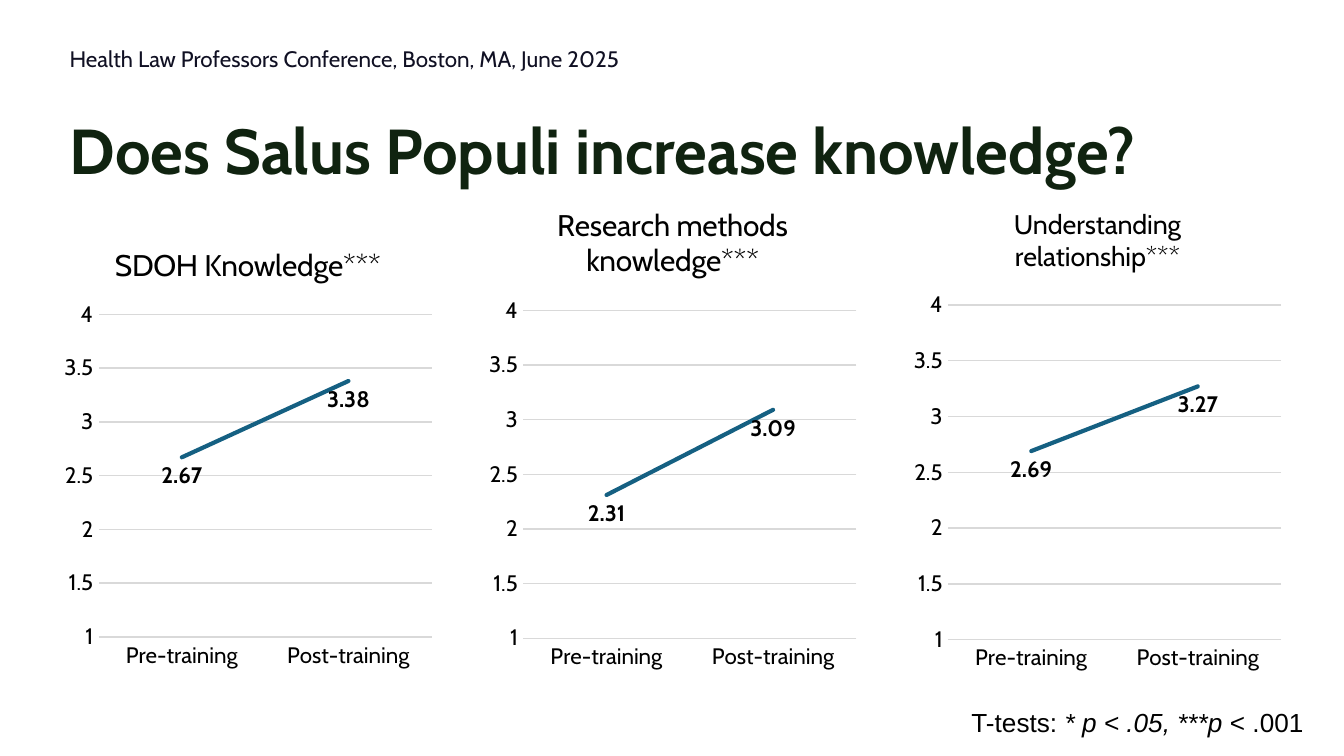
from dataclasses import dataclass

from pptx import Presentation
from pptx.chart.data import CategoryChartData
from pptx.dml.color import RGBColor
from pptx.enum.chart import XL_CHART_TYPE, XL_LABEL_POSITION, XL_MARKER_STYLE, XL_TICK_MARK
from pptx.enum.text import MSO_ANCHOR, MSO_AUTO_SIZE, PP_ALIGN
from pptx.oxml import parse_xml
from pptx.oxml.ns import nsdecls
from pptx.util import Inches, Pt


@dataclass(frozen=True)
class Theme:
    font: str = "Cabin"
    note_font: str = "Arial"
    title: str = "102310"
    header: str = "101023"
    text: str = "000000"
    grid: str = "D9D9D9"
    line: str = "156082"
    title_size: float = 34
    note_size: float = 14
    body_size: float = 12


THEME = Theme()
WIDTH = 10
HEIGHT = WIDTH * 9 / 16
MARGIN, COLUMN, GAP = 0.42, 2.85, 0.31
CATEGORIES = ("Pre-training", "Post-training")
# title, title size, values, top, height, plot top, plot height
CHARTS = (
    ("SDOH Knowledge***", 16, (2.67, 3.38), 1.66, 3.38, 2.34, 2.4),
    ("Research methods knowledge***", 16, (2.31, 3.09), 1.36, 3.7, 2.31, 2.44),
    ("Understanding relationship***", 14.4, (2.69, 3.27), 1.37, 3.7, 2.27, 2.49),
)


def style(font, size, color, name=THEME.font, bold=False, italic=False):
    font.name, font.size = name, Pt(size)
    font.bold, font.italic = bold, italic
    font.color.rgb = RGBColor.from_string(color)


def place(sp, box):
    sp.left, sp.top, sp.width, sp.height = map(Inches, box)


def set_insets(tf):
    tf.margin_left = tf.margin_right = tf.margin_top = tf.margin_bottom = Inches(0.1)


def add_title(s, text, box):
    sp = s.shapes.title
    place(sp, box)
    tf = sp.text_frame
    tf.text = text
    tf.word_wrap = True
    tf.auto_size = MSO_AUTO_SIZE.NONE
    tf.vertical_anchor = MSO_ANCHOR.BOTTOM
    set_insets(tf)
    p = tf.paragraphs[0]
    p.alignment = PP_ALIGN.LEFT
    style(p.runs[0].font, THEME.title_size, THEME.title, bold=True)


def add_header(s, text, box):
    tf = s.shapes.add_textbox(*map(Inches, box)).text_frame
    tf.text = text
    tf.word_wrap = True
    tf.vertical_anchor = MSO_ANCHOR.MIDDLE
    set_insets(tf)
    p = tf.paragraphs[0]
    p.line_spacing, p.space_after = 1.15, Pt(12)
    style(p.runs[0].font, THEME.body_size, THEME.header)


def add_note(s, parts, box):
    tf = s.shapes.add_textbox(*map(Inches, box)).text_frame
    tf.word_wrap = True
    tf.auto_size = MSO_AUTO_SIZE.SHAPE_TO_FIT_TEXT
    for text, italic in parts:
        r = tf.paragraphs[0].add_run()
        r.text = text
        style(r.font, THEME.note_size, THEME.text, THEME.note_font, italic=italic)


def set_plot_area(chart, x, y, w, h):
    """Fix the inner plot area, in shares of the chart."""
    area = chart.plots[0]._element.getparent()
    for old in area.findall("{*}layout"):
        area.remove(old)
    area.insert(0, parse_xml(
        f'<c:layout {nsdecls("c")}><c:manualLayout><c:layoutTarget val="inner"/>'
        '<c:xMode val="edge"/><c:yMode val="edge"/>'
        f'<c:x val="{x}"/><c:y val="{y}"/><c:w val="{w}"/><c:h val="{h}"/>'
        '</c:manualLayout></c:layout>'))


def set_line(line, color, width):
    line.color.rgb = RGBColor.from_string(color)
    line.width = Pt(width)


def format_axes(chart):
    cat, val = chart.category_axis, chart.value_axis
    for axis in (cat, val):
        axis.major_tick_mark = axis.minor_tick_mark = XL_TICK_MARK.NONE
        style(axis.tick_labels.font, THEME.body_size, THEME.text)
    cat.has_major_gridlines = False
    set_line(cat.format.line, THEME.grid, 0.75)
    val.minimum_scale, val.maximum_scale, val.major_unit = 1, 4, 0.5
    val.tick_labels.number_format = "General"
    val.tick_labels.number_format_is_linked = False
    val.format.line.fill.background()
    set_line(val.major_gridlines.format.line, THEME.grid, 0.75)


def format_series(series):
    series.smooth = False
    series.marker.style = XL_MARKER_STYLE.NONE
    set_line(series.format.line, THEME.line, 2.25)
    series._element.spPr.find("{*}ln").set("cap", "rnd")
    labels = series.data_labels
    labels.show_value = True
    labels.position = XL_LABEL_POSITION.BELOW
    labels.number_format = "#,##0.00"
    labels.number_format_is_linked = False
    style(labels.font, THEME.body_size, THEME.text, bold=True)


def add_line_chart(s, title, title_size, values, box, plot_top, plot_height):
    data = CategoryChartData(number_format="#,##0.00")
    data.categories = CATEGORIES
    data.add_series("Series 1", values)
    chart = s.shapes.add_chart(XL_CHART_TYPE.LINE, *map(Inches, box), data).chart
    style(chart.font, THEME.body_size, THEME.text)
    chart.has_legend = False
    chart.has_title = True
    chart.chart_title.include_in_layout = False
    tf = chart.chart_title.text_frame
    tf.text = title
    style(tf.paragraphs[0].runs[0].font, title_size, THEME.text)
    format_axes(chart)
    top, height = box[1], box[3]
    set_plot_area(chart, 0.11, (plot_top - top) / height, 0.87, plot_height / height)
    chart.plots[0].vary_by_categories = False
    format_series(chart.plots[0].series[0])


def main():
    prs = Presentation()
    prs.slide_width, prs.slide_height = Inches(WIDTH), Inches(HEIGHT)
    s = prs.slides.add_slide(prs.slide_layouts[5])
    add_title(s, "Does Salus Populi increase knowledge?", (MARGIN, 0.77, WIDTH - 2 * MARGIN, 0.72))
    add_header(s, "Health Law Professors Conference, Boston, MA, June 2025", (MARGIN, 0.25, 8.13, 0.34))
    add_note(s, (("T-tests:", False), (" * p < .05, ***p", True), (" < .001", False)),
             (7.13, 5.21, 2.97, 0.34))
    for i, (title, size, values, top, height, plot_top, plot_height) in enumerate(CHARTS):
        box = (MARGIN + i * (COLUMN + GAP), top, COLUMN, height)
        add_line_chart(s, title, size, values, box, plot_top, plot_height)
    prs.save("out.pptx")


if __name__ == "__main__":
    main()
